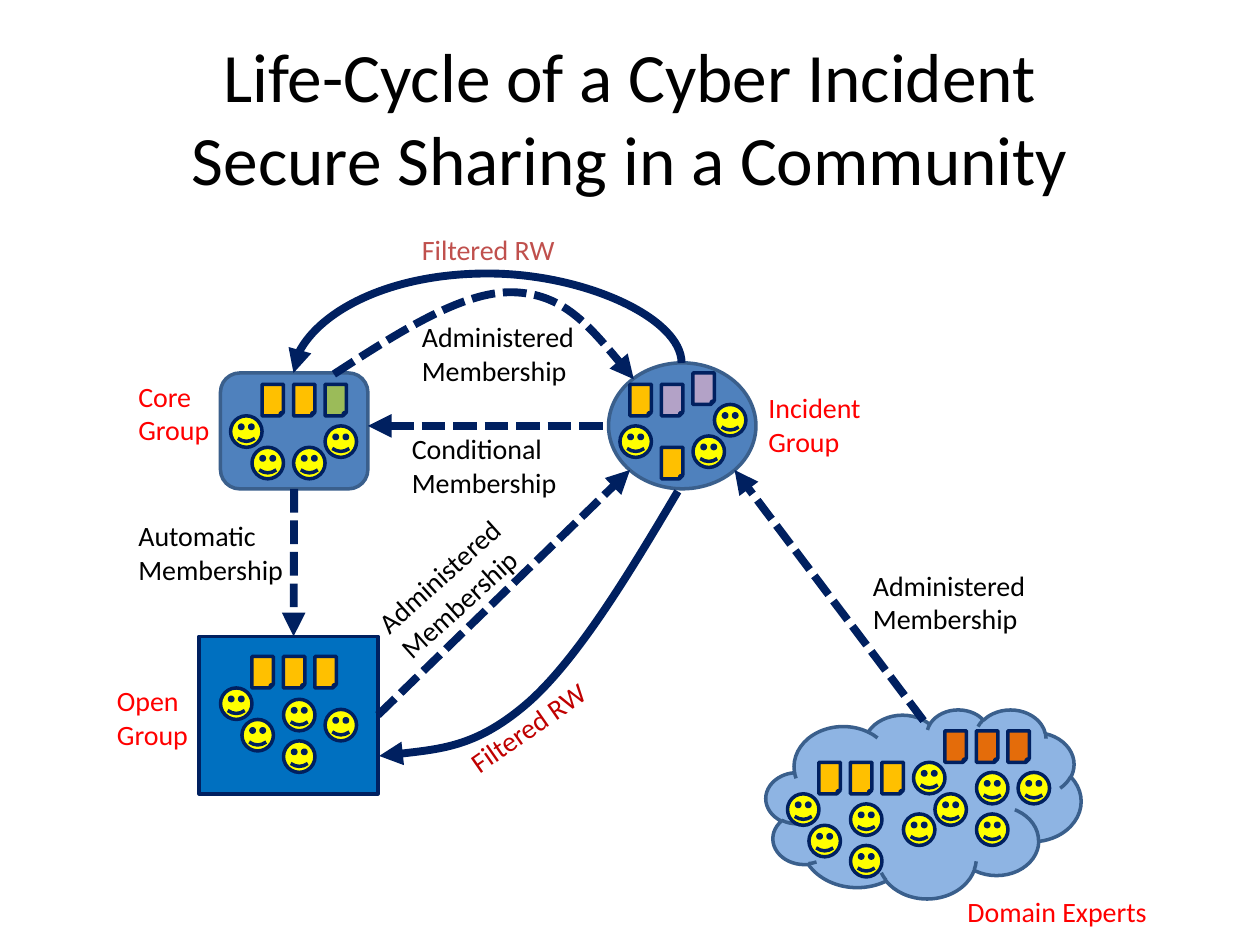
import pptx
import pptx.util
import pptx.dml.color
import pptx.enum.dml
import pptx.enum.shapes
import pptx.enum.text
import pptx.oxml
import pptx.oxml.ns

RGB = pptx.dml.color.RGBColor
Inches = pptx.util.Inches
Shape = pptx.enum.shapes.MSO_SHAPE
Link = pptx.enum.shapes.MSO_CONNECTOR
Fit = pptx.enum.text.MSO_AUTO_SIZE
Align = pptx.enum.text.PP_ALIGN
qn = pptx.oxml.ns.qn

BLACK = RGB(0, 0, 0)
RED = RGB(0xFF, 0, 0)
DARK = RGB(0xC0, 0, 0)
ROSE = RGB(0xC0, 0x50, 0x4D)
NAVY = RGB(0, 0x20, 0x60)
EDGE = RGB(0x3A, 0x5F, 0x8C)
BLUE = RGB(0x4F, 0x81, 0xBD)
OPEN = RGB(0, 0x70, 0xC0)
SKY = RGB(0x8E, 0xB4, 0xE3)
YELLOW = RGB(0xFF, 0xFF, 0)
GOLD = RGB(0xFF, 0xC0, 0)
GREEN = RGB(0x9B, 0xBB, 0x59)
LILAC = RGB(0xB3, 0xA2, 0xC7)
ORANGE = RGB(0xE4, 0x6C, 0x0A)

TITLE = "Life-Cycle of a Cyber Incident\vSecure Sharing in a Community"

GROUPS = {
    "core": (Shape.FLOWCHART_ALTERNATE_PROCESS, (1.75, 2.96, 1.17, 0.92), BLUE, EDGE),
    "open": (Shape.RECTANGLE, (1.58, 5.05, 1.42, 1.25), OPEN, NAVY),
    "incident": (Shape.OVAL, (4.83, 2.88, 1.17, 1), BLUE, EDGE),
    "experts": (Shape.CLOUD, (6.08, 5.63, 2.5, 1.5), SKY, EDGE),
}

FACES = [
    (1.92, 5.71), (2.25, 5.88), (2.58, 5.63), (2.25, 5.55), (1.75, 5.46),
    (2, 3.55), (2.58, 3.38), (2.33, 3.55), (1.83, 3.3),
    (4.92, 3.38), (5.67, 3.21), (5.5, 3.46),
    (6.42, 6.55), (6.75, 6.71), (7.17, 6.46), (6.75, 6.38), (6.25, 6.3),
    (7.42, 6.3), (7.75, 6.46), (8.08, 6.13), (7.75, 6.13), (7.25, 6.05),
]

NOTES = [
    (2, 5.21, [GOLD, GOLD, GOLD]),
    (2.08, 3.05, [GOLD, GOLD, GREEN]),
    (5, 3.05, [GOLD, LILAC]),
    (5.5, 2.96, [LILAC]),
    (5.25, 3.55, [GOLD]),
    (6.5, 6.05, [GOLD, GOLD, GOLD]),
    (7.5, 5.8, [ORANGE, ORANGE, ORANGE]),
]
STEP = 0.25

LABELS = [
    ("Core Group", (1, 2.96, 0.83, 0.64), RED, 0),
    ("Incident Group", (6, 3.05, 1.08, 0.64), RED, 0),
    ("Open Group", (0.83, 5.38, 0.92, 0.64), RED, 0),
    ("Domain Experts", (7.58, 7.05, 2.17, 0.37), RED, 0),
    ("Conditional Membership", (3.17, 3.38, 1.42, 0.64), BLACK, 0),
    ("Automatic Membership", (1, 4.07, 1.42, 0.64), BLACK, 0),
    ("Administered Membership", (2.87, 4.35, 1.42, 0.64), BLACK, 318),
    ("Administered Membership", (3.25, 2.49, 1.42, 0.64), BLACK, 0),
    ("Administered Membership", (6.83, 4.46, 1.42, 0.64), BLACK, 0),
    ("Filtered RW", (3.25, 1.8, 1.42, 0.37), ROSE, 0),
    ("Filtered RW", (3.55, 5.54, 1.42, 0.37), DARK, 325.2),
]

LINES = [
    ((2.92, 3.38), (4.83, 3.38), "headEnd", None),
    ((3, 5.67), (5, 3.73), "tailEnd", ("open", 3)),
    ((2.33, 3.88), (2.33, 5.05), "tailEnd", ("core", 2)),
    ((7.33, 5.72), (5.83, 3.73), "tailEnd", None),
]

CURVES = [
    ([(2.65, 2.97), (3.16, 2.64), (3.67, 2.31), (4.07, 2.32),
      (4.47, 2.33), (4.75, 2.67), (5.03, 3.01)], True),
    ([(5.38, 3.9), (4.99, 4.56), (4.59, 5.22), (4.2, 5.57),
      (3.8, 5.92), (3.41, 5.96), (3.01, 6)], False),
]


def sub(node, tag, **attrs):
    kid = pptx.oxml.parse_xml(
        '<a:%s xmlns:a="http://schemas.openxmlformats.org/drawingml/2006/main"/>' % tag)
    for key, val in attrs.items():
        kid.set(key, val)
    node.append(kid)


def write(frame, text, size=16, color=BLACK, align=Align.LEFT, fit=Fit.SHAPE_TO_FIT_TEXT):
    frame.word_wrap = True
    frame.auto_size = fit
    para = frame.paragraphs[0]
    para.text = text
    para.alignment = align
    for run in para.runs:
        run.font.name = "Calibri"
        run.font.size = pptx.util.Pt(size)
        run.font.color.rgb = color


def solid(shapes, kind, box, fill, edge):
    item = shapes.add_shape(kind, *map(Inches, box))
    item.shadow.inherit = False
    item.fill.solid()
    item.fill.fore_color.rgb = fill
    item.line.color.rgb = edge
    item.line.width = pptx.util.Pt(2)
    return item


def arrow(item, dash, end="tailEnd"):
    item.line.color.rgb = NAVY
    item.line.width = pptx.util.Pt(4.5)
    if dash:
        item.line.dash_style = pptx.enum.dml.MSO_LINE.SQUARE_DOT
    props = item._element.spPr
    sub(props.find(qn("a:ln")), end, type="triangle")
    if props.find(qn("a:effectLst")) is None:
        sub(props, "effectLst")


def bend(shapes, points, dash):
    spots = [(Inches(x), Inches(y)) for x, y in points]
    pen = shapes.build_freeform(*spots[0], scale=1.0)
    pen.add_line_segments(spots[1:], close=False)
    item = pen.convert_to_shape()
    item.shadow.inherit = False
    item.fill.background()
    route = next(item._element.iter(qn("a:path")))
    steps = route.findall(qn("a:lnTo"))
    for i in range(0, len(steps), 3):
        sub(route, "cubicBezTo")
        for step in steps[i:i + 3]:
            route[-1].append(step[0])
            route.remove(step)
    arrow(item, dash)


def main():
    deck = pptx.Presentation()
    deck.slide_width, deck.slide_height = Inches(10), Inches(7.5)
    slide = deck.slides.add_slide(deck.slide_layouts[5])
    shapes = slide.shapes

    head = shapes.title
    head.left, head.top, head.width, head.height = map(Inches, (0.5, 0.3, 9, 1.25))
    head.text_frame.vertical_anchor = pptx.enum.text.MSO_ANCHOR.MIDDLE
    write(head.text_frame, TITLE, size=39.6, align=Align.CENTER, fit=Fit.NONE)

    groups = {name: solid(shapes, *parts) for name, parts in GROUPS.items()}

    for start, stop, end, join in LINES:
        item = shapes.add_connector(Link.STRAIGHT, *map(Inches, start + stop))
        if join:
            item.begin_connect(groups[join[0]], join[1])
        arrow(item, True, end)

    arch = shapes.add_connector(Link.CURVE, *map(Inches, (3.91, 4.46, 3.83, 1.38)))
    props = arch._element.spPr
    props.find(qn("a:xfrm")).set("rot", str(270 * 60000))
    sub(next(props.iter(qn("a:avLst"))), "gd", name="adj1", fmla="val -888200")
    arrow(arch, False)

    for points, dash in CURVES:
        bend(shapes, points, dash)

    for x, y, fills in NOTES:
        for i, fill in enumerate(fills):
            solid(shapes, Shape.FOLDED_CORNER, (x + i * STEP, y, 0.17, 0.25), fill, NAVY)
    for x, y in FACES:
        solid(shapes, Shape.SMILEY_FACE, (x, y, 0.25, 0.25), YELLOW, NAVY)

    for text, box, color, turn in LABELS:
        item = shapes.add_textbox(*map(Inches, box))
        item.rotation = turn
        write(item.text_frame, text, color=color)

    deck.save("out.pptx")


if __name__ == "__main__":
    main()
